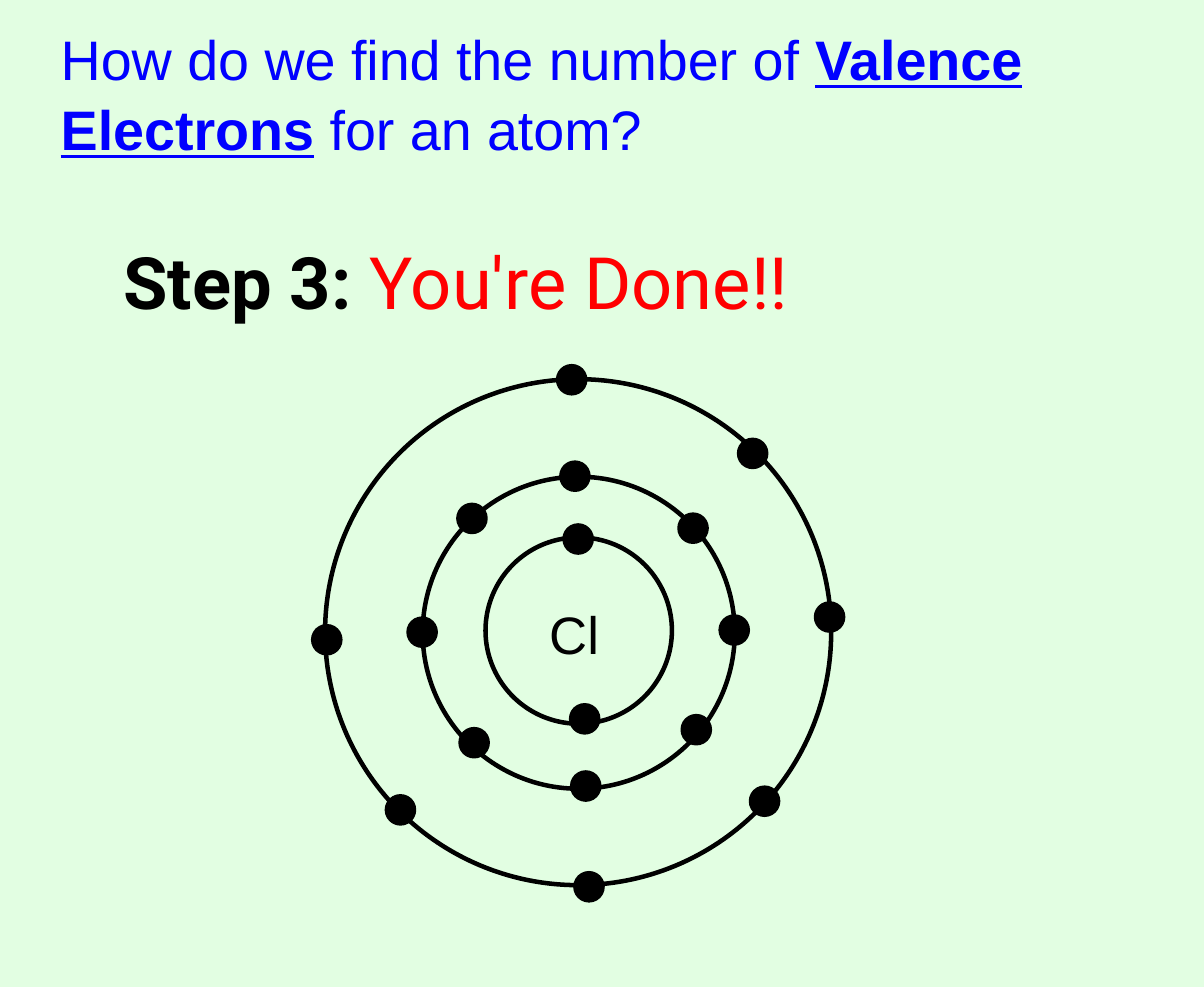
from pptx import Presentation
from pptx import util as u
from pptx.dml.color import RGBColor
from pptx.enum import shapes, text

COLORS = {"background": "E2FEE2", "question": "0000FF", "ink": "000000", "answer": "FF0000"}

deck = Presentation()
deck.slide_width, deck.slide_height = u.Inches(11.11), u.Inches(9.11)
page = deck.slides.add_slide(deck.slide_layouts[5])
page.background.fill.solid()
page.background.fill.fore_color.rgb = RGBColor.from_string(COLORS["background"])


def write(box, size, font, spans):
    """Fill a text box with (words, colour, bold, underline) spans."""
    frame = box.text_frame
    frame.word_wrap = True
    frame.auto_size = text.MSO_AUTO_SIZE.NONE
    frame.vertical_anchor = text.MSO_ANCHOR.TOP
    para = frame.paragraphs[0]
    para.alignment = text.PP_ALIGN.LEFT
    para.line_spacing = 1.05
    for words, color, bold, underline in spans:
        span = para.add_run()
        span.text = words
        span.font.name, span.font.size = font, u.Pt(size)
        span.font.bold, span.font.underline = bold, underline
        span.font.color.rgb = RGBColor.from_string(COLORS[color])


def add_circle(left, top, diameter, filled):
    circle = page.shapes.add_shape(
        shapes.MSO_SHAPE.OVAL, *[u.Inches(n) for n in (left, top, diameter, diameter)])
    circle.shadow.inherit = False
    circle.line.color.rgb = RGBColor.from_string(COLORS["ink"])
    circle.line.width = u.Pt(3)
    if filled:
        circle.fill.solid()
        circle.fill.fore_color.rgb = RGBColor.from_string(COLORS["ink"])
    else:
        circle.fill.background()


# Question
title = page.shapes.title
title.left, title.top = u.Inches(0.46), u.Inches(0.15)
title.width, title.height = u.Inches(10.33), u.Inches(1.35)
write(title, 37, "Arial", [
    ("How do we find the number of ", "question", False, False),
    ("Valence Electrons", "question", True, True),
    (" for an atom?", "question", False, False),
])

# Step
step = page.shapes.add_textbox(u.Inches(1.04), u.Inches(2.1), u.Inches(9.36), u.Inches(0.91))
write(step, 48, "Roboto", [
    ("Step 3: ", "ink", True, False),
    ("You're Done!!", "answer", False, False),
])

# Electron shells: left, top, diameter
for left, top, diameter in [(4.48, 4.96, 1.72), (3.9, 4.4, 2.88), (3, 3.5, 4.67)]:
    add_circle(left, top, diameter, filled=False)

# Element symbol
symbol = page.shapes.add_textbox(u.Inches(4.97), u.Inches(5.48), u.Inches(0.77), u.Inches(0.69))
write(symbol, 35, "Arial", [("Cl", "ink", False, False)])

# Electrons on each shell, clockwise from the top
electrons = {
    "inner": [(5.21, 4.85), (5.27, 6.51)],
    "middle": [(5.18, 4.27), (6.27, 4.75), (6.65, 5.69), (6.3, 6.61),
               (5.28, 7.13), (4.25, 6.73), (3.77, 5.71), (4.23, 4.66)],
    "valence": [(5.15, 3.38), (6.82, 4.06), (7.53, 5.57), (6.93, 7.27),
                (5.31, 8.06), (3.57, 7.35), (2.89, 5.78)],
}
for spots in electrons.values():
    for left, top in spots:
        add_circle(left, top, 0.25, filled=True)

deck.save("out.pptx")
